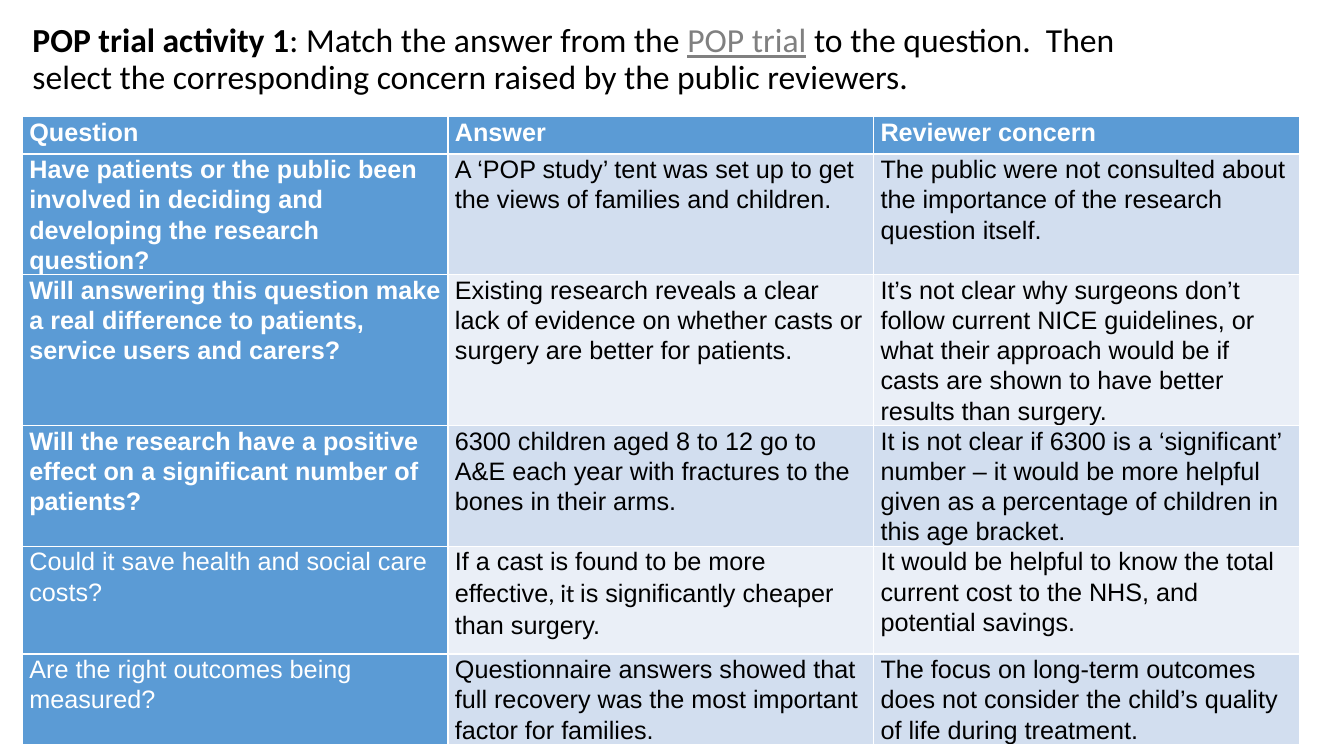
from pptx import Presentation
from pptx.dml.color import RGBColor
from pptx.enum.text import MSO_ANCHOR, MSO_AUTO_SIZE, PP_ALIGN
from pptx.util import Pt

BLACK = RGBColor(0, 0, 0)
WHITE = RGBColor(255, 255, 255)
GREY = RGBColor(0x80, 0x80, 0x80)
BLUE = RGBColor(0x5B, 0x9B, 0xD5)
BANDS = [RGBColor(0xD2, 0xDE, 0xEF), RGBColor(0xEA, 0xEF, 0xF7)]

# Text, bold, underline, colour
TITLE = [
    ("POP trial activity 1", True, False, BLACK),
    (": Match the answer from the ", False, False, BLACK),
    ("POP trial", False, True, GREY),
    (" to the question.  Then select the corresponding concern raised "
     "by the public reviewers.", False, False, BLACK),
]

# A cell with several fonts is a list of (text, font) pairs
ROWS = [
    ("Question", "Answer", "Reviewer concern"),
    ("Have patients or the public been involved in deciding and developing "
     "the research question?",
     "A ‘POP study’ tent was set up to get the views of families and children.",
     "The public were not consulted about the importance of the research "
     "question itself."),
    ("Will answering this question make a real difference to patients, "
     "service users and carers?",
     "Existing research reveals a clear lack of evidence on whether casts or "
     "surgery are better for patients.",
     "It’s not clear why surgeons don’t follow current NICE guidelines, or what "
     "their approach would be if casts are shown to have better results than "
     "surgery."),
    ("Will the research have a positive effect on a significant number of "
     "patients?",
     "6300 children aged 8 to 12 go to A&E each year with fractures to the "
     "bones in their arms.",
     "It is not clear if 6300 is a ‘significant’ number – it would be more "
     "helpful given as a percentage of children in this age bracket."),
    ("Could it save health and social care costs?",
     [("If a cast is found to be more effective", "Arial"),
      (", it ", "Calibri"),
      ("is significantly cheaper than surgery.", "Arial")],
     "It would be helpful to know the total current cost to the NHS, and "
     "potential savings."),
    ("Are the right outcomes being measured?",
     "Questionnaire answers showed that full recovery was the most important "
     "factor for families.",
     "The focus on long-term outcomes does not consider the child’s quality of "
     "life during treatment."),
]
ROW_HEIGHTS = [27, 62, 93, 62, 77, 62]
BOLD_QUESTIONS = range(1, 4)
LEFT, TABLE_TOP, COLUMN_WIDTH = 16, 83, 304


def add_run(paragraph, text, font, size, color, bold, underline=False):
    run = paragraph.add_run()
    run.text = text
    run.font.name = font
    run.font.size = Pt(size)
    run.font.color.rgb = color
    run.font.bold = bold
    run.font.underline = underline


def fill_title(title):
    title.left, title.top = Pt(LEFT), Pt(16.5)
    title.width, title.height = Pt(828), Pt(53)
    frame = title.text_frame
    frame.word_wrap = True
    frame.auto_size = MSO_AUTO_SIZE.NONE
    frame.vertical_anchor = MSO_ANCHOR.MIDDLE
    paragraph = frame.paragraphs[0]
    paragraph.alignment = PP_ALIGN.LEFT
    paragraph.line_spacing = 0.9
    for text, bold, underline, color in TITLE:
        add_run(paragraph, text, "Calibri", 24, color, bold, underline)


def fill_cell(cell, content, row, column):
    heading = row == 0 or column == 0
    cell.fill.solid()
    cell.fill.fore_color.rgb = BLUE if heading else BANDS[(row - 1) % 2]
    cell.margin_left = cell.margin_right = Pt(5)
    cell.margin_top = cell.margin_bottom = Pt(0)
    paragraph = cell.text_frame.paragraphs[0]
    paragraph.line_spacing = 1.07
    bold = row == 0 or (column == 0 and row in BOLD_QUESTIONS)
    runs = [(content, "Arial")] if isinstance(content, str) else content
    for text, font in runs:
        add_run(paragraph, text, font, 18, WHITE if heading else BLACK, bold)


def main():
    deck = Presentation()
    deck.slide_width, deck.slide_height = Pt(960), Pt(540)
    slide = deck.slides.add_slide(deck.slide_layouts.get_by_name("Title Only"))
    fill_title(slide.shapes.title)

    columns = len(ROWS[0])
    table = slide.shapes.add_table(
        len(ROWS), columns, Pt(LEFT), Pt(TABLE_TOP),
        Pt(COLUMN_WIDTH * columns), Pt(sum(ROW_HEIGHTS))).table
    table.first_col = True
    for column in table.columns:
        column.width = Pt(COLUMN_WIDTH)
    for r, (contents, height) in enumerate(zip(ROWS, ROW_HEIGHTS)):
        table.rows[r].height = Pt(height)
        for c, content in enumerate(contents):
            fill_cell(table.cell(r, c), content, r, c)
    deck.save("out.pptx")


if __name__ == "__main__":
    main()
